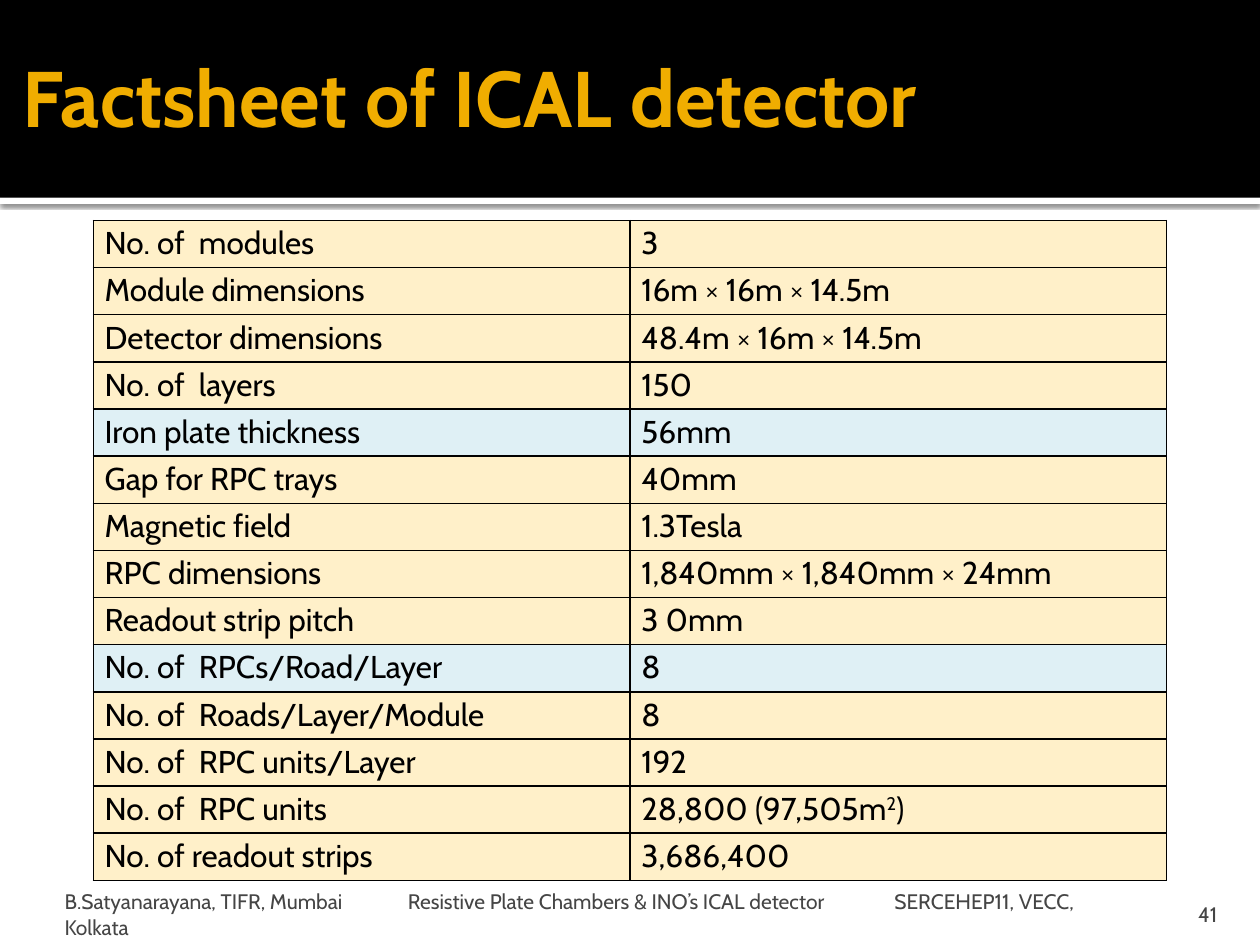
"""Build the ICAL detector factsheet slide."""
from dataclasses import dataclass

from lxml.etree import SubElement
from pptx import Presentation
from pptx.dml.color import RGBColor
from pptx.enum.shapes import MSO_SHAPE
from pptx.enum.text import MSO_ANCHOR, MSO_AUTO_SIZE, PP_ALIGN
from pptx.oxml import parse_xml
from pptx.oxml.ns import nsdecls, qn
from pptx.util import Pt

COLORS = {
    "black": "000000",
    "white": "FFFFFF",
    "gold": "F0AD00",
    "grey": "454545",
    "cream": "FFF0C9",
    "sky": "DFF0F5",
}
FONT = "Cabin"
TABLE_LEFT, TABLE_TOP, TABLE_WIDTH, TABLE_HEIGHT = 53.28, 126, 613.44, 377.28
FOOTER_TOP, FOOTER_HEIGHT = 510.5, 20.2
FOOTER_TABS = (196.2, 474.2)


@dataclass(frozen=True)
class Fact:
    label: str
    value: str
    fill: str = "cream"
    raised: str = ""
    ending: str = ""


@dataclass(frozen=True)
class Style:
    size: float
    color: str
    bold: bool = False


TITLE = Style(45, "gold", True)
BODY = Style(18, "black")
FOOTER = Style(12, "grey")

FACTS = (
    Fact("No. of  modules", "3"),
    Fact("Module dimensions", "16m × 16m × 14.5m"),
    Fact("Detector dimensions", "48.4m × 16m × 14.5m"),
    Fact("No. of  layers", "150"),
    Fact("Iron plate thickness", "56mm", "sky"),
    Fact("Gap for RPC trays", "40mm"),
    Fact("Magnetic field", "1.3Tesla"),
    Fact("RPC dimensions", "1,840mm × 1,840mm × 24mm"),
    Fact("Readout strip pitch", "3 0mm"),
    Fact("No. of  RPCs/Road/Layer", "8", "sky"),
    Fact("No. of  Roads/Layer/Module", "8"),
    Fact("No. of  RPC units/Layer", "192"),
    Fact("No. of  RPC units", "28,800 (97,505m", raised="2", ending=")"),
    Fact("No. of readout strips", "3,686,400"),
)


def color(name: str) -> RGBColor:
    """Return a named colour."""
    return RGBColor.from_string(COLORS[name])


def add_span(para, text: str, style: Style, raised: bool = False) -> None:
    """Append one formatted run to a paragraph."""
    span = para.add_run()
    span.text = text
    span.font.name = FONT
    span.font.size = Pt(style.size)
    span.font.bold = style.bold
    span.font.color.rgb = color(style.color)
    if raised:
        span.font._element.set("baseline", "30000")


def set_frame(frame, left: float, top: float, right: float, bottom: float) -> None:
    """Set insets, wrapping and middle anchoring of a text frame."""
    frame.margin_left, frame.margin_top = Pt(left), Pt(top)
    frame.margin_right, frame.margin_bottom = Pt(right), Pt(bottom)
    frame.word_wrap = True
    frame.auto_size = MSO_AUTO_SIZE.NONE
    frame.vertical_anchor = MSO_ANCHOR.MIDDLE


def add_band(page, top: float, height: float, fill: str):
    """Draw a full-width band."""
    band = page.shapes.add_shape(MSO_SHAPE.RECTANGLE, Pt(0), Pt(top), Pt(720), Pt(height))
    band.shadow.inherit = False
    band.fill.solid()
    band.fill.fore_color.rgb = color(fill)
    band.line.fill.background()
    return band


def add_shadow(band) -> None:
    """Give a band a soft shadow below it."""
    effects = band.element.spPr.find(qn("a:effectLst"))
    effects.append(parse_xml(
        f'<a:outerShdw {nsdecls("a")} blurRad="{Pt(2.5)}" dist="{Pt(0.8)}" dir="5400000" '
        f'algn="t" rotWithShape="0"><a:srgbClr val="{COLORS["black"]}">'
        '<a:alpha val="60000"/></a:srgbClr></a:outerShdw>'
    ))


def format_title(page, text: str) -> None:
    """Place the title placeholder above the bands and fill it."""
    title = page.shapes.title
    title.element.getparent().append(title.element)
    title.left, title.top, title.width, title.height = Pt(5.76), Pt(5.76), Pt(708.5), Pt(98.64)
    set_frame(title.text_frame, 7.2, 3.6, 3.6, 3.6)
    para = title.text_frame.paragraphs[0]
    para.alignment = PP_ALIGN.LEFT
    add_span(para, text, TITLE)


def add_footer(page, left: float, width: float, inset: float, align: PP_ALIGN):
    """Add a footer box and return its first paragraph."""
    box = page.shapes.add_textbox(Pt(left), Pt(FOOTER_TOP), Pt(width), Pt(FOOTER_HEIGHT))
    set_frame(box.text_frame, inset, 3.6, 3.6 if align == PP_ALIGN.LEFT else 7.2, 0)
    para = box.text_frame.paragraphs[0]
    para.alignment = align
    return para


def add_tabs(para, stops: tuple[float, ...]) -> None:
    """Add left tab stops to a paragraph."""
    tabs = SubElement(para._p.get_or_add_pPr(), qn("a:tabLst"))
    for stop in stops:
        SubElement(tabs, qn("a:tab"), pos=str(Pt(stop)), algn="l")


def format_cell(cell, fill: str) -> None:
    """Set the fill, insets and borders of a cell."""
    cell.margin_left = cell.margin_right = Pt(6.5)
    cell.margin_top = cell.margin_bottom = Pt(2.2)
    properties = cell._tc.get_or_add_tcPr()
    for side in ("lnL", "lnR", "lnT", "lnB"):
        border = SubElement(properties, qn(f"a:{side}"), w=str(Pt(1)))
        paint = SubElement(border, qn("a:solidFill"))
        SubElement(paint, qn("a:srgbClr"), val=COLORS["black"])
    cell.fill.solid()
    cell.fill.fore_color.rgb = color(fill)


def add_facts(page, facts: tuple[Fact, ...]) -> None:
    """Add the two-column table of facts."""
    frame = page.shapes.add_table(
        len(facts), 2, Pt(TABLE_LEFT), Pt(TABLE_TOP), Pt(TABLE_WIDTH), Pt(TABLE_HEIGHT)
    )
    table = frame.table
    table.first_row = table.horz_banding = False
    for row, fact in enumerate(facts):
        label, value = table.cell(row, 0), table.cell(row, 1)
        for cell in (label, value):
            format_cell(cell, fact.fill)
        add_span(label.text_frame.paragraphs[0], fact.label, BODY)
        para = value.text_frame.paragraphs[0]
        add_span(para, fact.value, BODY)
        if fact.raised:
            add_span(para, fact.raised, BODY, raised=True)
            add_span(para, fact.ending, BODY)


def main() -> None:
    """Build and save the deck."""
    deck = Presentation()
    deck.slide_width, deck.slide_height = Pt(720), Pt(540)
    page = deck.slides.add_slide(deck.slide_layouts[5])
    page.background.fill.solid()
    page.background.fill.fore_color.rgb = color("white")
    add_shadow(add_band(page, 113, 3.6, "white"))
    add_band(page, 0, 113, "black")
    format_title(page, "Factsheet of ICAL detector")
    credit = add_footer(page, 14.4, 623.5, 22.5, PP_ALIGN.LEFT)
    add_tabs(credit, FOOTER_TABS)
    add_span(credit, "B.Satyanarayana, TIFR, Mumbai\t", FOOTER)
    add_span(credit, "Resistive Plate Chambers & INO’s ICAL detector\t", FOOTER)
    add_span(credit, "SERCEHEP11, VECC, Kolkata", FOOTER)
    add_span(add_footer(page, 645.8, 56.9, 7.2, PP_ALIGN.RIGHT), "41", FOOTER)
    add_facts(page, FACTS)
    deck.save("out.pptx")


if __name__ == "__main__":
    main()
